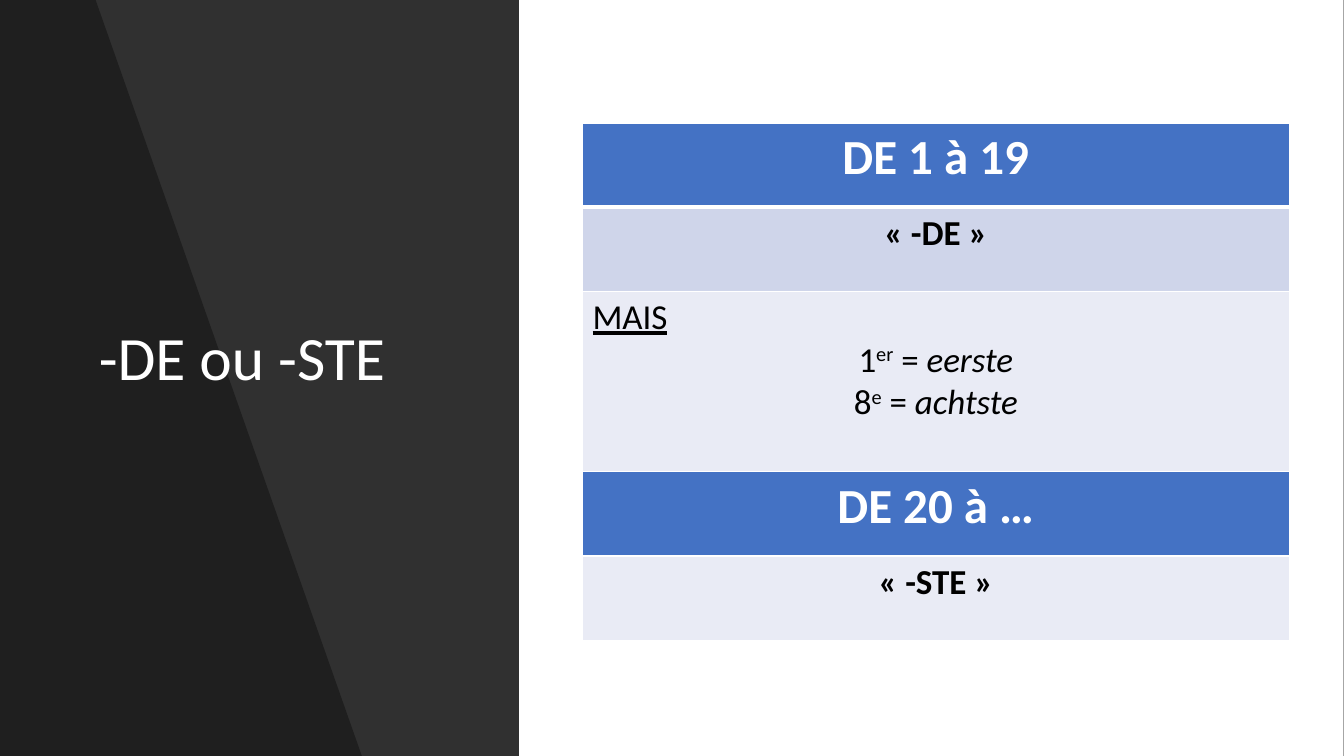
from dataclasses import dataclass

from pptx import Presentation
from pptx.dml.color import RGBColor
from pptx.enum.shapes import MSO_SHAPE
from pptx.enum.text import MSO_ANCHOR, PP_ALIGN
from pptx.oxml.ns import qn
from pptx.oxml.xmlchemy import OxmlElement
from pptx.util import Cm, Pt


@dataclass(frozen=True)
class Theme:
    font: str = "Calibri"
    black: str = "000000"
    white: str = "FFFFFF"
    heading_fill: str = "4472C4"
    band_dark: str = "CFD5EA"
    band_light: str = "E9EBF5"
    title_size: int = 44
    heading_size: int = 35
    body_size: int = 25
    panel_alpha: int = 81
    wedge_alpha: int = 35


THEME = Theme()
SLIDE_WIDTH, SLIDE_HEIGHT = 33.87, 19.05


def add_span(para, text, size=THEME.body_size, color=THEME.black,
             bold=False, italic=False, underline=False, raised=False):
    span = para.add_run()
    span.text = text
    font = span.font
    font.name, font.size = THEME.font, Pt(size)
    font.bold, font.italic, font.underline = bold, italic, underline
    font.color.rgb = RGBColor.from_string(color)
    if raised:
        font._element.set("baseline", "30000")


def paint(shape, color, alpha=100):
    shape.shadow.inherit = False
    shape.line.fill.background()
    shape.fill.solid()
    shape.fill.fore_color.rgb = RGBColor.from_string(color)
    if alpha < 100:
        opacity = OxmlElement("a:alpha")
        opacity.set("val", str(alpha * 1000))
        next(shape.element.spPr.iter(qn("a:srgbClr"))).append(opacity)


def add_rectangle(page, left, top, width, height, color, alpha=100):
    box = page.shapes.add_shape(
        MSO_SHAPE.RECTANGLE, Cm(left), Cm(top), Cm(width), Cm(height))
    paint(box, color, alpha)


def add_border(cell, side, width):
    line = OxmlElement(f"a:ln{side}")
    line.set("w", str(Pt(width)))
    fill = OxmlElement("a:solidFill")
    color = OxmlElement("a:srgbClr")
    color.set("val", THEME.white)
    fill.append(color)
    line.append(fill)
    cell._tc.get_or_add_tcPr().append(line)


def build_title_panel(page, left, top, width, height):
    add_rectangle(page, left, top, width, height, THEME.black, THEME.panel_alpha)

    # Darker slanted wedge
    outline = page.shapes.build_freeform(Cm(left), Cm(top))
    bottom = top + height
    outline.add_line_segments([
        (Cm(left + 2.41), Cm(top)),
        (Cm(left + 9.12), Cm(bottom)),
        (Cm(left), Cm(bottom)),
    ], close=True)
    paint(outline.convert_to_shape(), THEME.black, THEME.wedge_alpha)

    # Title
    box = page.shapes.add_textbox(
        Cm(left + 2.24), Cm(top + 1.78), Cm(9.12), Cm(14.6))
    frame = box.text_frame
    frame.word_wrap = True
    frame.vertical_anchor = MSO_ANCHOR.MIDDLE
    para = frame.paragraphs[0]
    para.line_spacing = 0.9
    add_span(para, "-DE ou -STE", size=THEME.title_size, color=THEME.white)


def fill_cell(cell, color, lines, bottom_border=1):
    for side in "LRT":
        add_border(cell, side, 1)
    add_border(cell, "B", bottom_border)
    cell.fill.solid()
    cell.fill.fore_color.rgb = RGBColor.from_string(color)
    frame = cell.text_frame
    for index, (alignment, spans) in enumerate(lines):
        para = frame.add_paragraph() if index else frame.paragraphs[0]
        para.alignment = alignment
        for text, style in spans:
            add_span(para, text, **style)


def build_rule_table(page, left, top, width, row_height, exception_height):
    heading = dict(size=THEME.heading_size, color=THEME.white, bold=True)

    def centered(*spans):
        return PP_ALIGN.CENTER, spans

    def ordinal(number, suffix, word):
        return centered((number, {}), (suffix, dict(raised=True)),
                        (" = ", {}), (word, dict(italic=True)))

    exceptions = [
        (PP_ALIGN.LEFT, [("MAIS", dict(underline=True))]),
        ordinal("1", "er", "eerste"),
        ordinal("8", "e", "achtste"),
    ]
    # Height, fill, lines and bottom border of each row
    rows = [
        (row_height, THEME.heading_fill, [centered(("DE 1 à 19", heading))], 3),
        (row_height, THEME.band_dark, [centered(("« -DE »", dict(bold=True)))], 1),
        (exception_height, THEME.band_light, exceptions, 1),
        (row_height, THEME.heading_fill, [centered(("DE 20 à …", heading))], 1),
        (row_height, THEME.band_light, [centered(("« -STE »", dict(bold=True)))], 1),
    ]
    total = sum(row[0] for row in rows)
    table = page.shapes.add_table(
        len(rows), 1, Cm(left), Cm(top), Cm(width), Cm(total)).table
    table.horz_banding = False
    for index, (height, color, lines, border) in enumerate(rows):
        table.rows[index].height = Cm(height)
        fill_cell(table.cell(index, 0), color, lines, border)


def main():
    deck = Presentation()
    deck.slide_width, deck.slide_height = Cm(SLIDE_WIDTH), Cm(SLIDE_HEIGHT)
    page = deck.slides.add_slide(deck.slide_layouts[6])

    # Black background under a white sheet
    page.background.fill.solid()
    page.background.fill.fore_color.rgb = RGBColor.from_string(THEME.black)
    add_rectangle(page, 0, 0, SLIDE_WIDTH - 0.01, SLIDE_HEIGHT, THEME.white)

    build_title_panel(page, 0, 0, 13.08, SLIDE_HEIGHT)
    build_rule_table(page, 14.68, 3.1, 17.81, row_height=2.12, exception_height=4.55)
    deck.save("out.pptx")


if __name__ == "__main__":
    main()
